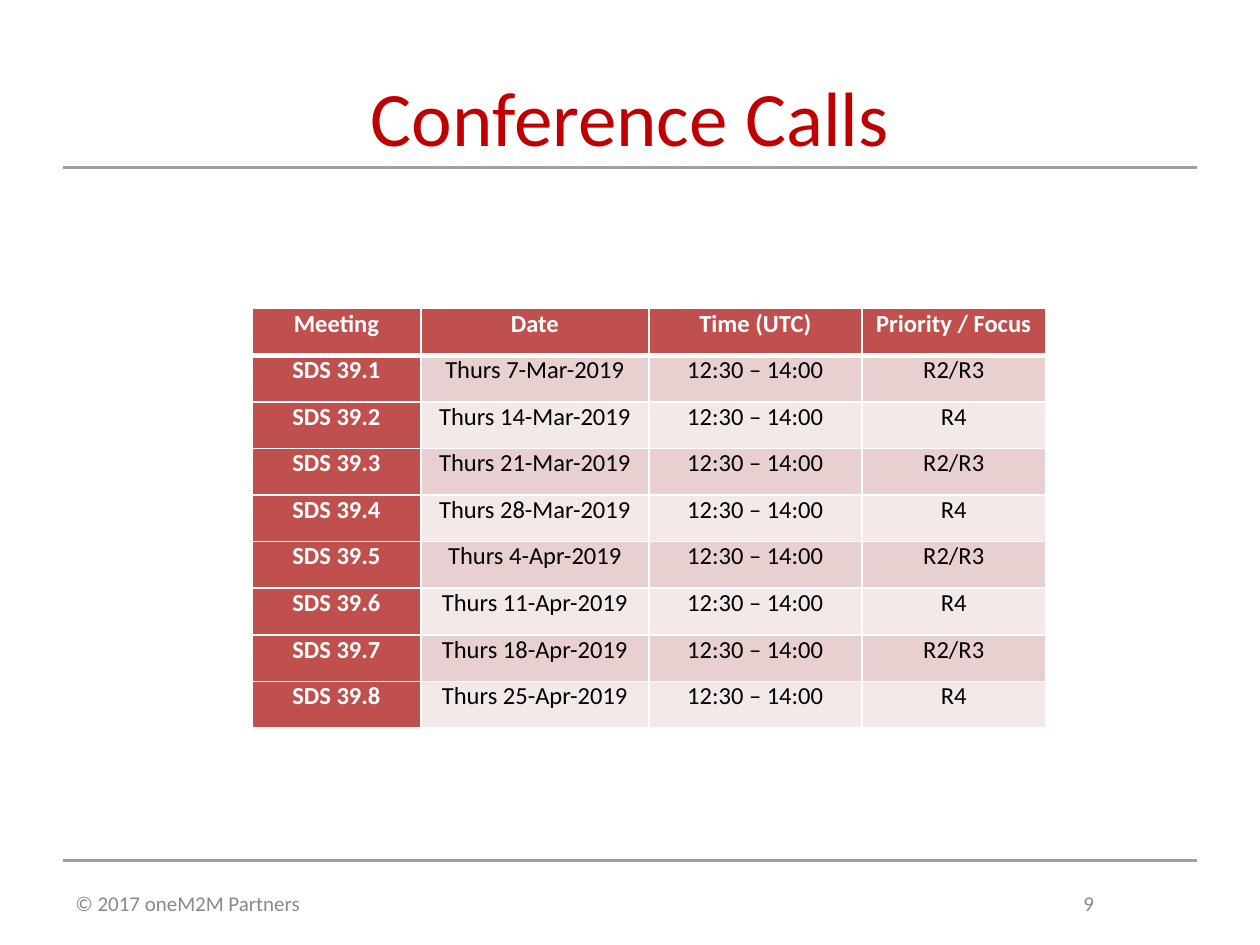
from dataclasses import dataclass

from pptx import Presentation
from pptx.dml.color import RGBColor
from pptx.enum import shapes, text
from pptx.oxml.ns import qn
from pptx.util import Inches, Pt
from lxml import etree

COLORS = {
    "title": "C00000", "rule": "A0A0A3", "footer": "898989",
    "header": "C0504D", "odd": "E8D0D0", "even": "F4E9E9",
    "white": "FFFFFF", "black": "000000",
}
FONT = "Calibri"
HEADINGS = ("Meeting", "Date", "Time (UTC)", "Priority / Focus")
COL_WIDTHS = (1.34, 1.81, 1.69, 1.46)
ROW_HEIGHT = 0.37


@dataclass
class Call:
    number: int
    day: str

    def cells(self) -> tuple:
        focus = "R2/R3" if self.number % 2 else "R4"
        return (f"SDS 39.{self.number}", f"Thurs {self.day}-2019",
                "12:30 – 14:00", focus)


DAYS = ("7-Mar", "14-Mar", "21-Mar", "28-Mar",
        "4-Apr", "11-Apr", "18-Apr", "25-Apr")
CALLS = [Call(n, day) for n, day in enumerate(DAYS, 1)]


def rgb(name: str) -> RGBColor:
    return RGBColor.from_string(COLORS[name])


def style(p, size: float, color: str, bold: bool = False) -> None:
    p.font.name = FONT
    p.font.size = Pt(size)
    p.font.bold = bold
    p.font.color.rgb = rgb(color)


def add_rule(s, y: float) -> None:
    line = s.shapes.add_connector(shapes.MSO_CONNECTOR.STRAIGHT,
                                  Inches(0.5), Inches(y), Inches(9.5), Inches(y))
    line.line.color.rgb = rgb("rule")
    line.line.width = Pt(1.75)
    etree.SubElement(line._element.spPr, qn("a:effectLst"))


def add_borders(cell, bottom: float, top: float) -> None:
    tc_pr = cell._tc.get_or_add_tcPr()
    for side, width in (("L", 1), ("R", 1), ("T", top), ("B", bottom)):
        ln = etree.SubElement(tc_pr, qn(f"a:ln{side}"), w=str(Pt(width)))
        fill = etree.SubElement(ln, qn("a:solidFill"))
        etree.SubElement(fill, qn("a:srgbClr"), val=COLORS["white"])


def add_tab(p, position: float) -> None:
    tabs = etree.SubElement(p._p.get_or_add_pPr(), qn("a:tabLst"))
    etree.SubElement(tabs, qn("a:tab"), pos=str(Inches(position)), algn="l")


def fill_cell(cell, value: str, row: int, col: int) -> None:
    heading = row == 0 or col == 0
    add_borders(cell, bottom=3 if row == 0 else 1, top=3 if row == 1 else 1)
    cell.fill.solid()
    cell.fill.fore_color.rgb = rgb("header" if heading else "odd" if row % 2 else "even")
    cell.margin_left = cell.margin_right = Inches(0.07)
    cell.margin_top = cell.margin_bottom = 0
    p = cell.text_frame.paragraphs[0]
    p.text = value
    p.alignment = text.PP_ALIGN.CENTER
    style(p, 14, "white" if heading else "black", heading)


def add_schedule(s) -> None:
    rows = [HEADINGS] + [call.cells() for call in CALLS]
    table = s.shapes.add_table(len(rows), len(HEADINGS), Inches(2), Inches(2.45),
                               Inches(sum(COL_WIDTHS)),
                               Inches(ROW_HEIGHT * len(rows))).table
    table.first_col = True
    for column, width in zip(table.columns, COL_WIDTHS):
        column.width = Inches(width)
    for r, values in enumerate(rows):
        table.rows[r].height = Inches(ROW_HEIGHT)
        for c, value in enumerate(values):
            fill_cell(table.cell(r, c), value, r, c)


def add_title(s, value: str) -> None:
    title = s.shapes.title
    title.left, title.top = Inches(0.5), Inches(0.5)
    title.width, title.height = Inches(9), Inches(1.25)
    tf = title.text_frame
    tf.vertical_anchor = text.MSO_ANCHOR.TOP
    p = tf.paragraphs[0]
    p.text = value
    p.alignment = text.PP_ALIGN.CENTER
    style(p, 44, "title")


def add_footer(s, value: str) -> None:
    tf = s.shapes.add_textbox(Inches(0.5), Inches(6.83),
                              Inches(9), Inches(0.67)).text_frame
    tf.word_wrap = True
    tf.vertical_anchor = text.MSO_ANCHOR.MIDDLE
    p = tf.paragraphs[0]
    p.text = value
    add_tab(p, 8)
    style(p, 12, "footer")


def main() -> None:
    prs = Presentation()
    prs.slide_width, prs.slide_height = Inches(10), Inches(7.5)
    s = prs.slides.add_slide(prs.slide_layouts[5])

    # Rules above and below the content
    for y in (6.83, 1.33):
        add_rule(s, y)

    # Title, footer and schedule
    add_title(s, "Conference Calls")
    add_footer(s, "© 2017 oneM2M Partners\t9")
    add_schedule(s)
    prs.save("out.pptx")


if __name__ == "__main__":
    main()
